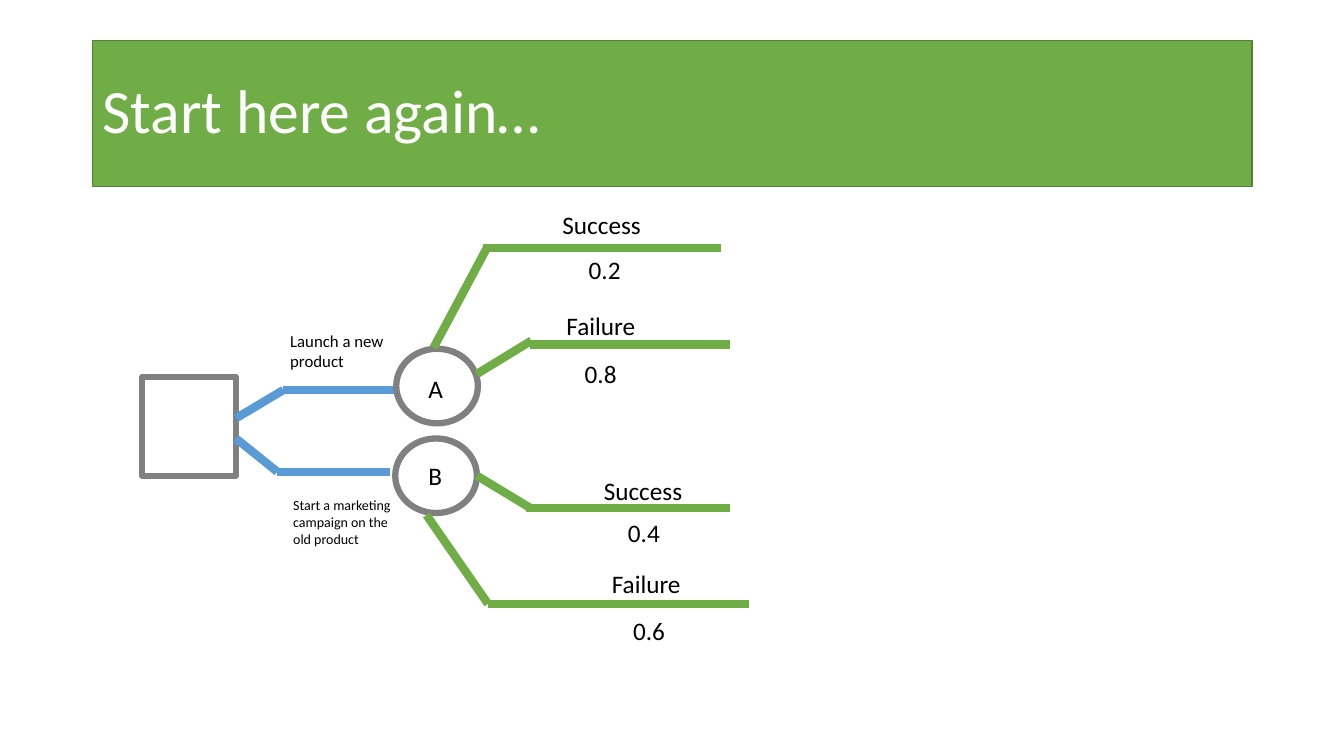
from dataclasses import dataclass
from pptx import Presentation
from pptx.dml.color import RGBColor
from pptx.enum.shapes import MSO_CONNECTOR as Connector, MSO_SHAPE as Shape
from pptx.enum.text import MSO_ANCHOR as Anchor, MSO_AUTO_SIZE as AutoSize, PP_ALIGN as Align
from pptx.oxml.ns import qn
from pptx.util import Inches, Pt
from lxml import etree


@dataclass(frozen=True)
class Theme:
    font: str = "Calibri"
    green: str = "70AD47"
    dark_green: str = "538035"
    blue: str = "5B9BD5"
    grey: str = "808080"
    white: str = "FFFFFF"
    black: str = "000000"
    title_size: float = 44
    label_size: float = 18
    launch_size: float = 12
    campaign_size: float = 10
    title_border: float = 1
    node_border: float = 4.5
    branch_width: float = 6


THEME = Theme()

DECISION_BRANCHES = [
    ((2.34, 4.15), (2.81, 3.87), (2.81, 3.87), 3.93),
    ((2.34, 4.35), (2.75, 4.68), (2.75, 4.68), 3.87),
]
CHANCE_BRANCHES = [
    ((4.3, 3.45), (4.84, 2.44), (4.79, 2.46), 7.15),
    ((4.73, 3.71), (5.27, 3.38), (5.26, 3.42), 7.24),
    ((4.73, 4.72), (5.26, 5.04), (5.22, 5.04), 7.24),
    ((4.23, 5.11), (4.84, 5.99), (4.84, 5.99), 7.43),
]
CHANCE_NODES = [("A", 3.93, 3.46, 3.65), ("B", 3.92, 4.35, 4.52)]
OUTCOMES = [
    ("Success", 5.48, 2.03, 0.99),
    ("0.2", 5.74, 2.47, 0.52),
    ("Failure", 5.52, 3.03, 0.89),
    ("0.8", 5.7, 3.51, 0.52),
    ("Success", 5.89, 4.67, 0.99),
    ("0.4", 6.13, 5.08, 0.52),
    ("Failure", 5.97, 5.59, 0.89),
    ("0.6", 6.18, 6.06, 0.52),
]


def color(value):
    return RGBColor.from_string(value)


def write(frame, text, size, ink):
    frame.text = text
    para = frame.paragraphs[0]
    para.alignment = Align.LEFT
    font = para.runs[0].font
    font.name = THEME.font
    font.size = Pt(size)
    font.color.rgb = color(ink)
    return para


def add_title(page, text):
    box = page.shapes.add_shape(
        Shape.RECTANGLE, Inches(0.92), Inches(0.4), Inches(11.5), Inches(1.45))
    box.shadow.inherit = False
    box.fill.solid()
    box.fill.fore_color.rgb = color(THEME.green)
    box.line.color.rgb = color(THEME.dark_green)
    box.line.width = Pt(THEME.title_border)
    box.text_frame.vertical_anchor = Anchor.MIDDLE
    para = write(box.text_frame, text, THEME.title_size, THEME.white)
    para.line_spacing = 0.9


def add_node(tree, kind, left, top, width, height):
    node = tree.add_shape(kind, Inches(left), Inches(top), Inches(width), Inches(height))
    node.shadow.inherit = False
    node.fill.background()
    node.line.color.rgb = color(THEME.grey)
    node.line.width = Pt(THEME.node_border)


def add_line(tree, start, end, ink):
    line = tree.add_connector(Connector.STRAIGHT, *map(Inches, start + end))
    line.line.color.rgb = color(ink)
    line.line.width = Pt(THEME.branch_width)
    etree.SubElement(line._element.spPr, qn("a:effectLst"))


def add_branch(tree, start, tip, level_start, level_right, ink):
    add_line(tree, start, tip, ink)
    add_line(tree, level_start, (level_right, level_start[1]), ink)


def add_label(tree, text, left, top, width, height=0.4, size=THEME.label_size, wrap=False):
    box = tree.add_textbox(Inches(left), Inches(top), Inches(width), Inches(height))
    frame = box.text_frame
    frame.word_wrap = wrap
    frame.auto_size = AutoSize.SHAPE_TO_FIT_TEXT
    write(frame, text, size, THEME.black)


def main():
    deck = Presentation()
    deck.slide_width = Inches(13.33)
    deck.slide_height = Inches(7.5)
    page = deck.slides.add_slide(deck.slide_layouts[6])

    add_title(page, "Start here again…")
    tree = page.shapes.add_group_shape().shapes
    add_node(tree, Shape.RECTANGLE, 1.41, 3.74, 0.93, 0.98)
    for branch in DECISION_BRANCHES:
        add_branch(tree, *branch, THEME.blue)
    add_label(tree, "Launch a new product", 2.78, 3.23, 1.17, 0.5, THEME.launch_size, True)
    add_label(tree, "Start a marketing campaign on the old product",
              2.81, 4.88, 1.26, 0.61, THEME.campaign_size, True)
    for name, left, top, label_top in CHANCE_NODES:
        add_node(tree, Shape.OVAL, left, top, 0.81, 0.74)
        add_label(tree, name, 4.15, label_top, 0.35)
    for branch in CHANCE_BRANCHES:
        add_branch(tree, *branch, THEME.green)
    for outcome in OUTCOMES:
        add_label(tree, *outcome)

    deck.save("out.pptx")


if __name__ == "__main__":
    main()
